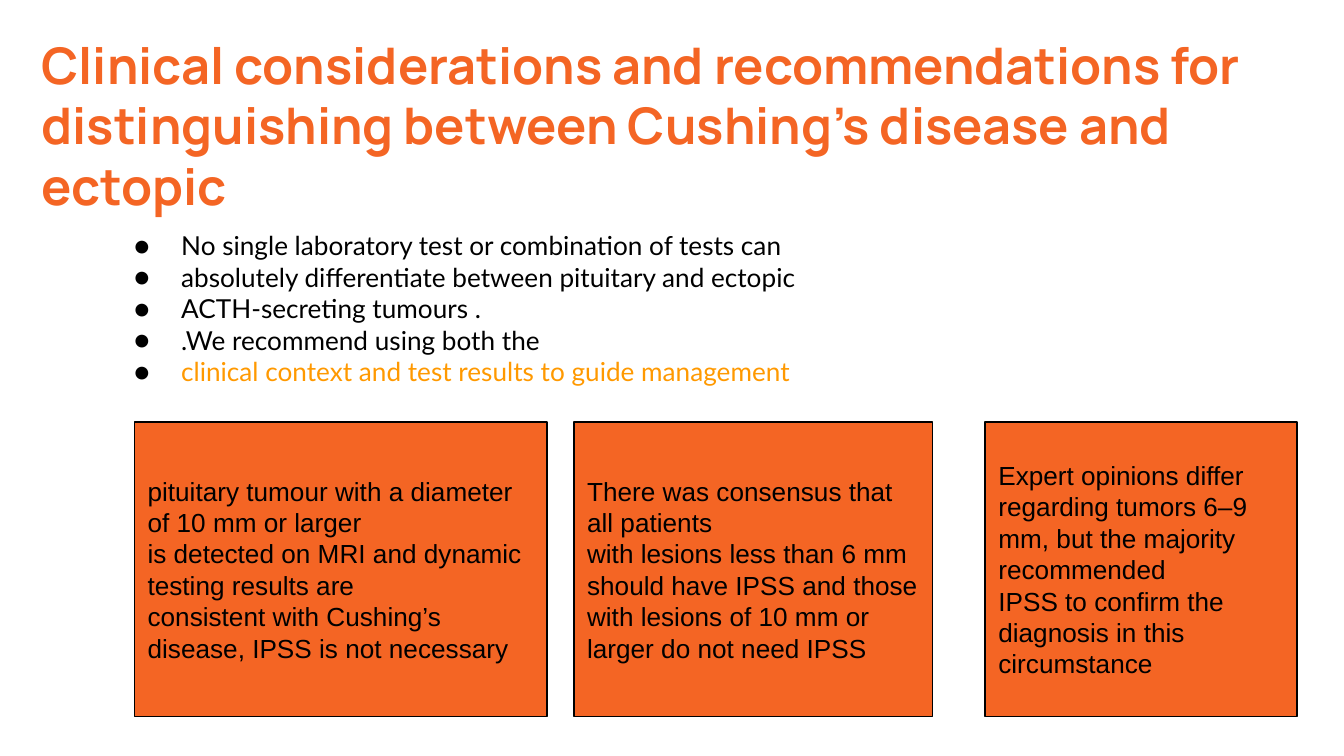
from dataclasses import dataclass

from lxml import etree
from pptx import Presentation
from pptx.dml.color import RGBColor
from pptx.enum.shapes import MSO_SHAPE
from pptx.enum.text import MSO_ANCHOR, PP_ALIGN
from pptx.oxml.ns import qn
from pptx.util import Inches, Pt

RECT = MSO_SHAPE.RECTANGLE
TOP, MIDDLE = MSO_ANCHOR.TOP, MSO_ANCHOR.MIDDLE
LEFT = PP_ALIGN.LEFT


@dataclass(frozen=True)
class Theme:
    orange: str = "F46524"
    amber: str = "FF9900"
    black: str = "000000"
    title_font: str = "Manrope"
    list_font: str = "Lato"
    box_font: str = "Arial"
    title_size: int = 27
    body_size: int = 14


THEME = Theme()

TITLE = [
    "Clinical considerations and recommendations for",
    "distinguishing between Cushing’s disease and ectopic",
]
POINTS = [
    "No single laboratory test or combination of tests can",
    "absolutely differentiate between pituitary and ectopic",
    "ACTH-secreting tumours .",
    ".We recommend using both the",
]
HIGHLIGHT = "clinical context and test results to guide management"

# Left edge, width and paragraphs of each box
BOXES = [
    (1, 3.07, [
        "pituitary tumour with a diameter of 10 mm or larger",
        "is detected on MRI and dynamic testing results are",
        "consistent with Cushing’s disease, IPSS is not necessary",
    ]),
    (4.27, 2.67, [
        "There was consensus that all patients",
        "with lesions less than 6 mm should have IPSS and those",
        "with lesions of 10 mm or larger do not need IPSS",
    ]),
    (7.33, 2.32, [
        "Expert opinions differ",
        "regarding tumors 6–9 mm, but the majority recommended",
        "IPSS to confirm the diagnosis in this circumstance",
    ]),
]


def rgb(color):
    return RGBColor.from_string(color)


def setup_frame(tf, anchor):
    tf.word_wrap = True
    tf.vertical_anchor = anchor
    tf.margin_left = tf.margin_right = Inches(0.1)
    tf.margin_top = tf.margin_bottom = Inches(0.1)


def add_lines(tf, lines, font, size, color, bold=False):
    """Write one paragraph per line and return the paragraphs."""
    for i, line in enumerate(lines):
        p = tf.paragraphs[0] if i == 0 else tf.add_paragraph()
        p.alignment = LEFT
        p.space_before = p.space_after = Pt(0)
        r = p.add_run()
        r.text = line
        r.font.name = font
        r.font.size = Pt(size)
        r.font.bold = bold
        r.font.color.rgb = rgb(color)
    return tf.paragraphs


def add_bullet(p, color, font, size):
    pPr = p._p.get_or_add_pPr()
    pPr.set("marL", str(Inches(0.5)))
    pPr.set("indent", str(Inches(-0.35)))
    clr = etree.SubElement(pPr, qn("a:buClr"))
    etree.SubElement(clr, qn("a:srgbClr"), val=color)
    etree.SubElement(pPr, qn("a:buSzPts"), val=str(size * 100))
    etree.SubElement(pPr, qn("a:buFont"), typeface=font)
    etree.SubElement(pPr, qn("a:buChar"), char="●")


def set_title(s):
    sp = s.shapes.title
    sp.left, sp.top = Inches(0.21), Inches(0.15)
    sp.width, sp.height = Inches(9.32), Inches(0.7)
    setup_frame(sp.text_frame, TOP)
    add_lines(sp.text_frame, TITLE, THEME.title_font, THEME.title_size,
              THEME.orange, bold=True)


def add_points(s):
    sp = s.shapes.add_textbox(Inches(0.75), Inches(1.61), Inches(8), Inches(1.59))
    setup_frame(sp.text_frame, TOP)
    paragraphs = add_lines(sp.text_frame, POINTS + [HIGHLIGHT],
                           THEME.list_font, THEME.body_size, THEME.black)
    for p in paragraphs:
        add_bullet(p, THEME.black, THEME.list_font, THEME.body_size)
    paragraphs[-1].runs[0].font.color.rgb = rgb(THEME.amber)


def add_box(s, left, width, lines):
    sp = s.shapes.add_shape(RECT, Inches(left), Inches(3.14),
                            Inches(width), Inches(2.19))
    sp.shadow.inherit = False
    sp.fill.solid()
    sp.fill.fore_color.rgb = rgb(THEME.orange)
    sp.line.color.rgb = rgb(THEME.black)
    sp.line.width = Pt(0.75)
    setup_frame(sp.text_frame, MIDDLE)
    add_lines(sp.text_frame, lines, THEME.box_font, THEME.body_size, THEME.black)


def main():
    # Widescreen page, 16:9
    prs = Presentation()
    prs.slide_width = Inches(10)
    prs.slide_height = Inches(10 * 9 / 16)
    s = prs.slides.add_slide(prs.slide_layouts[5])

    # Heading and bullet list
    set_title(s)
    add_points(s)

    # Recommendation boxes
    for left, width, lines in BOXES:
        add_box(s, left, width, lines)

    prs.save("out.pptx")


if __name__ == "__main__":
    main()
